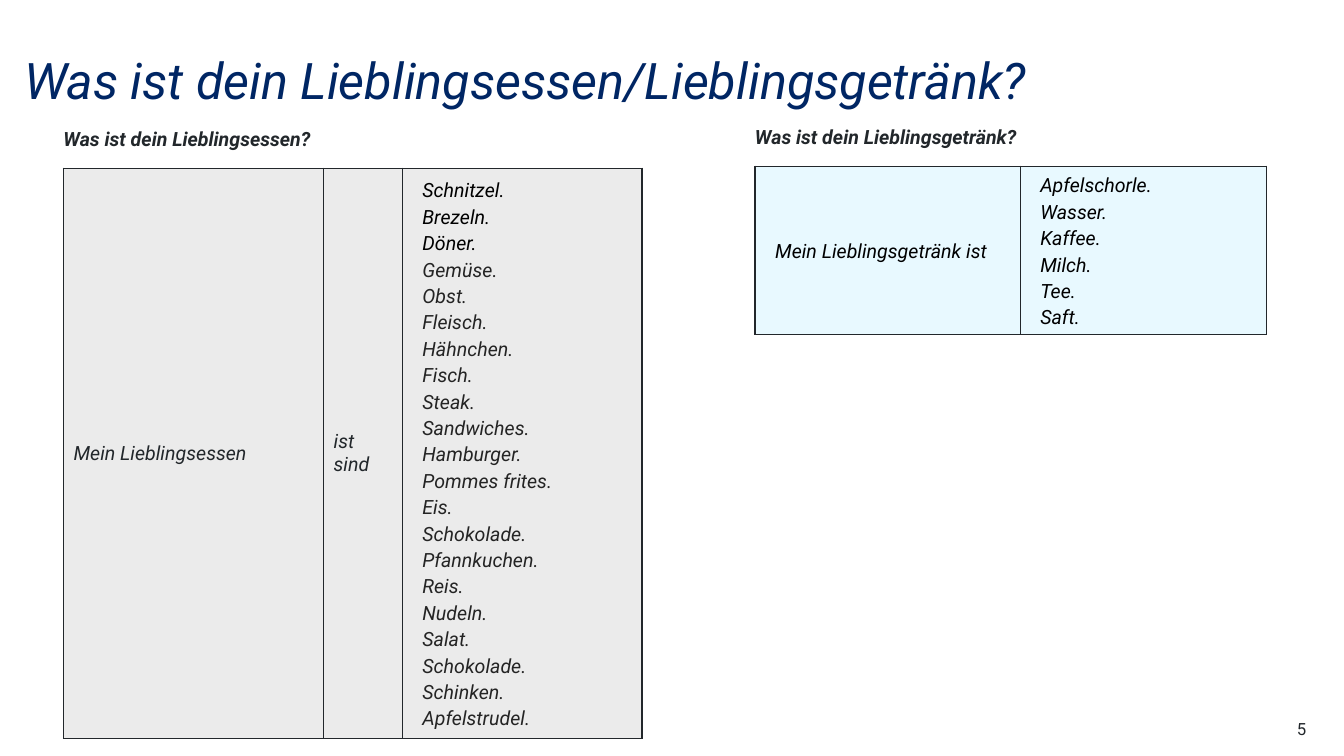
from dataclasses import dataclass

from lxml.etree import SubElement
from pptx import Presentation
from pptx.dml.color import RGBColor
from pptx.enum.text import MSO_ANCHOR as Anchor, MSO_AUTO_SIZE as AutoSize, PP_ALIGN as Align
from pptx.oxml.ns import qn
from pptx.util import Pt


@dataclass(frozen=True)
class Theme:
    font: str = "Roboto"
    navy: str = "002664"
    ink: str = "22272B"
    black: str = "000000"
    soft_black: str = "242424"
    grey_fill: str = "EBEBEB"
    blue_fill: str = "E8F9FF"
    title_size: float = 36
    body_size: float = 14
    number_size: float = 12
    border_width: float = 1
    item_indent: float = 7.2
    item_spacing: float = 1.14


THEME = Theme()


@dataclass(frozen=True)
class Box:
    left: float
    top: float
    width: float
    height: float

    def lengths(self) -> tuple:
        return Pt(self.left), Pt(self.top), Pt(self.width), Pt(self.height)


@dataclass(frozen=True)
class Line:
    text: str
    color: str = THEME.ink
    size: float = THEME.body_size
    bold: bool = False
    italic: bool = True
    item: bool = False
    align: Align = Align.LEFT
    spacing: float = 1.0


@dataclass(frozen=True)
class Panel:
    heading: str
    heading_box: Box
    table_box: Box
    column_widths: tuple[float, ...]
    fill: str
    cells: tuple[list[Line], ...]


def items(text: str, color: str) -> list[Line]:
    return [Line(word, color, item=True, spacing=THEME.item_spacing) for word in text.split("|")]


PANELS = (
    Panel(
        "Was ist dein Lieblingsessen?",
        Box(45.36, 90.72, 378.7, 17.3),
        Box(45.36, 120.24, 413.3, 407.5),
        (185.8, 56.2, 171.3),
        THEME.grey_fill,
        (
            [Line("Mein Lieblingsessen")],
            [Line("ist"), Line("sind")],
            items("Schnitzel.|Brezeln.|Döner.", THEME.black)
            + items(
                "Gemüse.|Obst.|Fleisch.|Hähnchen.|Fisch.|Steak.|Sandwiches.|Hamburger.|"
                "Pommes frites.|Eis.|Schokolade.|Pfannkuchen.|Reis.|Nudeln.|Salat.|"
                "Schokolade.|Schinken.|Apfelstrudel.",
                THEME.soft_black,
            ),
        ),
    ),
    Panel(
        "Was ist dein Lieblingsgetränk?",
        Box(539.28, 89.28, 326.9, 17.3),
        Box(539.28, 118.8, 365, 120.2),
        (189.4, 175.7),
        THEME.blue_fill,
        (
            items("Mein Lieblingsgetränk ist", THEME.black),
            items("Apfelschorle.|Wasser.|Kaffee.|Milch.|Tee.|Saft.", THEME.black),
        ),
    ),
)


def write_lines(frame, lines: list[Line]) -> None:
    for index, line in enumerate(lines):
        paragraph = frame.add_paragraph() if index else frame.paragraphs[0]
        paragraph.alignment = line.align
        paragraph.line_spacing = line.spacing
        if line.item:
            paragraph._p.get_or_add_pPr().set("marL", str(Pt(THEME.item_indent)))
        run = paragraph.add_run()
        run.text = line.text
        formats = {"name": THEME.font, "size": Pt(line.size), "bold": line.bold, "italic": line.italic}
        for name, value in formats.items():
            setattr(run.font, name, value)
        run.font.color.rgb = RGBColor.from_string(line.color)


def fill_text_shape(shape, line: Line) -> None:
    frame = shape.text_frame
    formats = {
        "margin_left": 0, "margin_top": 0, "margin_right": 0, "margin_bottom": 0,
        "word_wrap": True, "auto_size": AutoSize.NONE, "vertical_anchor": Anchor.TOP,
    }
    for name, value in formats.items():
        setattr(frame, name, value)
    write_lines(frame, [line])


def add_text(slide, box: Box, line: Line) -> None:
    fill_text_shape(slide.shapes.add_textbox(*box.lengths()), line)


def add_borders(cell) -> None:
    properties = cell._tc.get_or_add_tcPr()
    for side in ("a:lnL", "a:lnR", "a:lnT", "a:lnB"):
        border = SubElement(properties, qn(side), w=str(Pt(THEME.border_width)))
        solid = SubElement(border, qn("a:solidFill"))
        SubElement(solid, qn("a:srgbClr"), val=THEME.ink)


def add_panel(slide, panel: Panel) -> None:
    add_text(slide, panel.heading_box, Line(panel.heading, bold=True))
    table = slide.shapes.add_table(1, len(panel.cells), *panel.table_box.lengths()).table
    table.first_row = table.horz_banding = False
    for index, (width, lines) in enumerate(zip(panel.column_widths, panel.cells)):
        table.columns[index].width = Pt(width)
        cell = table.cell(0, index)
        cell.vertical_anchor = Anchor.MIDDLE
        add_borders(cell)
        cell.fill.solid()
        cell.fill.fore_color.rgb = RGBColor.from_string(panel.fill)
        write_lines(cell.text_frame, lines)


def add_title(slide, box: Box, line: Line) -> None:
    title = slide.shapes.title
    title.left, title.top, title.width, title.height = box.lengths()
    fill_text_shape(title, line)


def main() -> None:
    presentation = Presentation()
    presentation.slide_width, presentation.slide_height = Pt(960), Pt(540)
    slide = presentation.slides.add_slide(presentation.slide_layouts[5])
    add_title(
        slide,
        Box(17.28, 32.4, 942.5, 79.2),
        Line("Was ist dein Lieblingsessen/Lieblingsgetränk?", THEME.navy, THEME.title_size, spacing=1.07),
    )
    for panel in PANELS:
        add_panel(slide, panel)
    add_text(
        slide,
        Box(876.24, 513.36, 56.9, 14.4),
        Line("5", size=THEME.number_size, italic=False, align=Align.RIGHT),
    )
    presentation.save("out.pptx")


if __name__ == "__main__":
    main()
